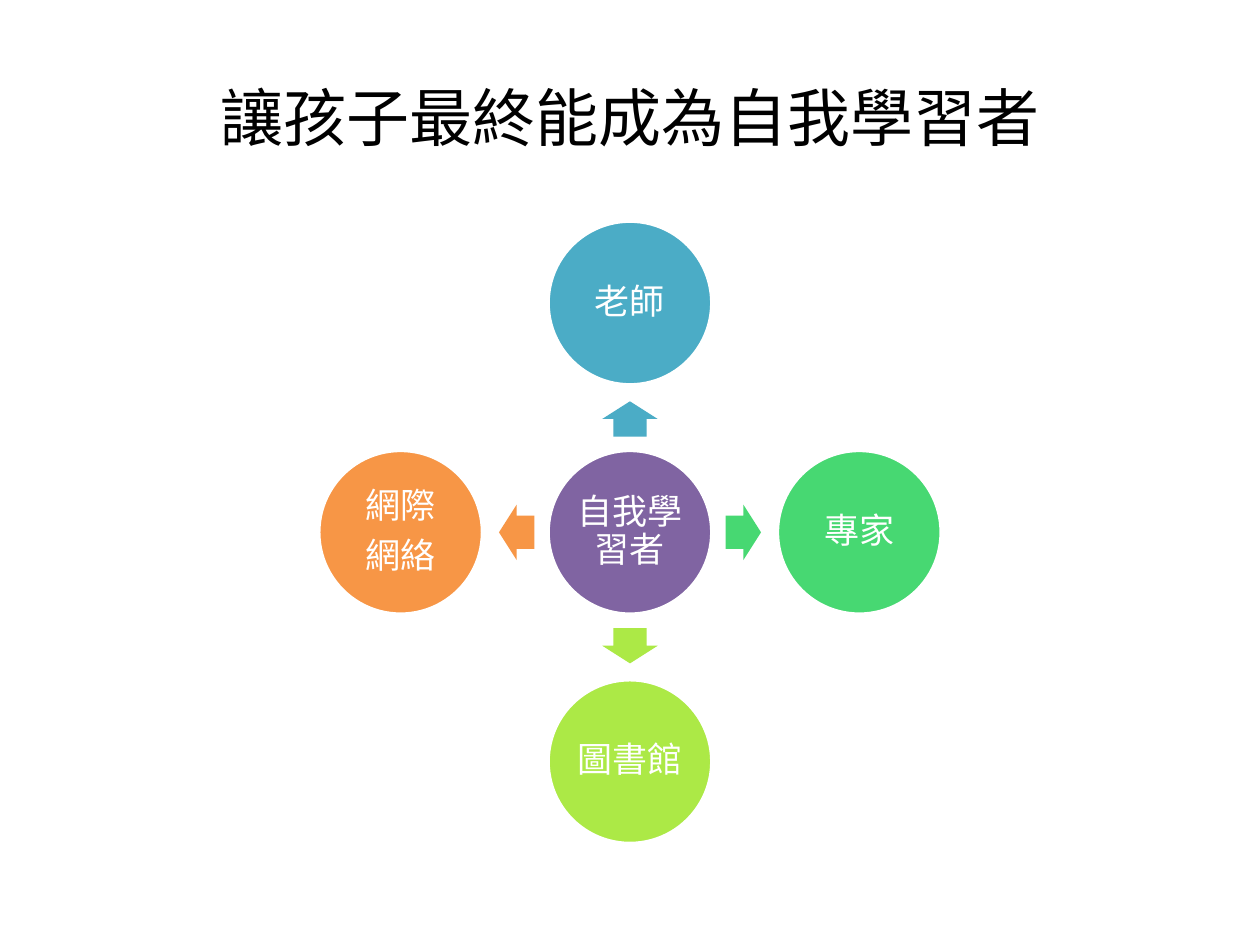
from lxml.etree import SubElement
from pptx import Presentation
from pptx.dml.color import RGBColor as RGB
from pptx.enum.shapes import MSO_SHAPE as Shape
from pptx.enum.text import MSO_ANCHOR as Anchor, PP_ALIGN as Align
from pptx.oxml.ns import qn
from pptx.util import Inches, Pt

BLACK = RGB(0x00, 0x00, 0x00)
WHITE = RGB(0xFF, 0xFF, 0xFF)
PURPLE = RGB(0x80, 0x64, 0xA2)
BLUE = RGB(0x4B, 0xAC, 0xC6)
GREEN = RGB(0x47, 0xD8, 0x72)
LIME = RGB(0xAC, 0xE9, 0x46)
ORANGE = RGB(0xF7, 0x96, 0x46)

DISC = 1.3
REACH = 1.82
MID = 0.9
SPOKES = [
    (0, -1, 270, BLUE, ["老師"]),
    (1, 0, 0, GREEN, ["專家"]),
    (0, 1, 90, LIME, ["圖書館"]),
    (-1, 0, 180, ORANGE, ["網際", "網絡"]),
]


def add_run(para, text, size, font, color):
    run = para.add_run()
    run.text = text
    run.font.size = Pt(size)
    run.font.name = font
    run.font.color.rgb = color
    return run


def add_title(slide, left, top, width, height):
    title = slide.shapes.title
    title.left, title.top = Inches(left), Inches(top)
    title.width, title.height = Inches(width), Inches(height)
    frame = title.text_frame
    frame.vertical_anchor = Anchor.MIDDLE
    para = frame.paragraphs[0]
    para.alignment = Align.CENTER
    font = "Noto Sans CJK SC"
    run = add_run(para, "讓孩子最終能成為自我學習者", 36, font, BLACK)
    SubElement(run.font._element, qn("a:ea"), typeface=font)


def add_form(group, kind, x, y, width, height, color):
    form = group.shapes.add_shape(
        kind, Inches(x - width / 2), Inches(y - height / 2),
        Inches(width), Inches(height))
    form.shadow.inherit = False
    form.fill.solid()
    form.fill.fore_color.rgb = color
    return form


def add_disc(group, x, y, color, lines):
    disc = add_form(group, Shape.OVAL, x, y, DISC, DISC, color)
    disc.line.color.rgb = WHITE
    disc.line.width = Pt(2)
    frame = disc.text_frame
    frame.word_wrap = True
    frame.vertical_anchor = Anchor.MIDDLE
    frame.margin_left = frame.margin_right = Inches(0.03)
    frame.margin_top = frame.margin_bottom = Inches(0.03)
    for i, line in enumerate(lines):
        para = frame.add_paragraph() if i else frame.paragraphs[0]
        para.alignment = Align.CENTER
        para.line_spacing = 0.9
        para.space_after = Pt(7)
        add_run(para, line, 20, "Calibri", WHITE)


def add_arrow(group, x, y, turn, color):
    arrow = add_form(group, Shape.RIGHT_ARROW, x, y, 0.28, 0.44, color)
    arrow.line.fill.background()
    arrow.adjustments[0] = 0.6
    arrow.adjustments[1] = 0.5
    arrow.rotation = turn


def add_wheel(slide, left, top, width, height):
    group = slide.shapes.add_group_shape()
    x, y = left + width / 2, top + height / 2
    add_disc(group, x, y, PURPLE, ["自我學習者"])
    for dx, dy, turn, color, lines in SPOKES:
        add_arrow(group, x + dx * MID, y + dy * MID, turn, color)
        add_disc(group, x + dx * REACH, y + dy * REACH, color, lines)


def main():
    deck = Presentation()
    deck.slide_width, deck.slide_height = Inches(10), Inches(7.5)
    slide = deck.slides.add_slide(deck.slide_layouts[5])
    add_title(slide, 0.5, 0.3, 9, 1.25)
    add_wheel(slide, 0.5, 1.75, 9, 4.95)
    deck.save("out.pptx")


if __name__ == "__main__":
    main()
